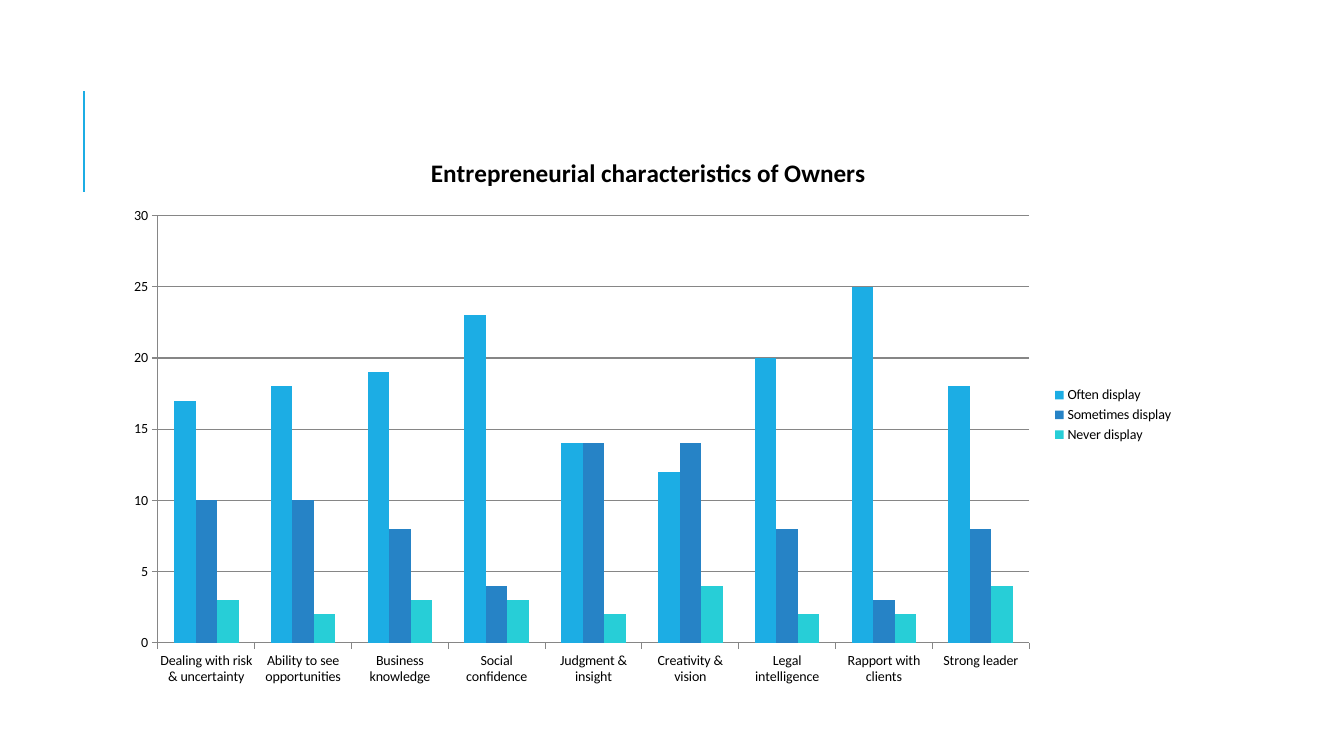
from dataclasses import dataclass

from lxml.etree import SubElement
from pptx import Presentation
from pptx.chart.chart import Chart
from pptx.chart.data import CategoryChartData
from pptx.dml.color import RGBColor
from pptx.enum.chart import XL_CHART_TYPE as ChartType
from pptx.enum.chart import XL_LEGEND_POSITION as LegendPosition
from pptx.enum.chart import XL_TICK_MARK as TickMark
from pptx.enum.shapes import MSO_CONNECTOR as ConnectorType
from pptx.oxml.ns import qn
from pptx.slide import Slide
from pptx.util import Cm, Pt

COLORS = {
    "background": "FFFFFF",
    "text": "000000",
    "axis": "868686",
    "accent": "1CADE4",
    "often": "1CADE4",
    "sometimes": "2683C6",
    "never": "27CED7",
}
FONT = "Calibri"
TITLE = "Entrepreneurial characteristics of Owners"
CHARACTERISTICS = (
    "Dealing with risk & uncertainty",
    "Ability to see opportunities",
    "Business knowledge",
    "Social confidence",
    "Judgment & insight",
    "Creativity & vision",
    "Legal intelligence",
    "Rapport with clients",
    "Strong leader",
)


@dataclass(frozen=True)
class Frequency:
    name: str
    color: str
    owners: tuple[int, ...]


FREQUENCIES = (
    Frequency("Often display", "often", (17, 18, 19, 23, 14, 12, 20, 25, 18)),
    Frequency("Sometimes display", "sometimes", (10, 10, 8, 4, 14, 14, 8, 3, 8)),
    Frequency("Never display", "never", (3, 2, 3, 3, 2, 4, 2, 2, 4)),
)


def rgb(name: str) -> RGBColor:
    return RGBColor.from_string(COLORS[name])


def add_accent_line(slide: Slide) -> None:
    line = slide.shapes.add_connector(
        ConnectorType.STRAIGHT, Cm(2.12), Cm(4.83), Cm(2.12), Cm(2.29)
    )
    line.line.color.rgb = rgb("accent")
    line.line.width = Pt(1.5)
    SubElement(line._element.spPr, qn("a:effectLst"))


def add_column_chart(slide: Slide) -> Chart:
    chart_data = CategoryChartData()
    chart_data.categories = CHARACTERISTICS
    for frequency in FREQUENCIES:
        chart_data.add_series(frequency.name, frequency.owners)
    chart = slide.shapes.add_chart(
        ChartType.COLUMN_CLUSTERED, Cm(2.84), Cm(3.38), Cm(27), Cm(14.15), chart_data
    ).chart
    chart.font.name = FONT
    chart.font.size = Pt(10)
    chart.font.color.rgb = rgb("text")

    plot = chart.plots[0]
    plot.vary_by_categories = False
    plot.gap_width = 150
    plot.overlap = 0
    for series, frequency in zip(plot.series, FREQUENCIES):
        series.format.fill.solid()
        series.format.fill.fore_color.rgb = rgb(frequency.color)
    return chart


def style_title(chart: Chart) -> None:
    chart.has_title = True
    chart.chart_title.include_in_layout = False
    text_frame = chart.chart_title.text_frame
    text_frame.text = TITLE
    font = text_frame.paragraphs[0].runs[0].font
    font.name = FONT
    font.size = Pt(18)
    font.bold = True
    font.color.rgb = rgb("text")


def style_axes(chart: Chart) -> None:
    value_axis = chart.value_axis
    value_axis.minimum_scale = 0
    value_axis.maximum_scale = 30
    value_axis.major_unit = 5
    value_axis.has_major_gridlines = True
    for axis in (chart.category_axis, value_axis):
        axis.major_tick_mark = TickMark.OUTSIDE
        axis.minor_tick_mark = TickMark.NONE
    for part in (chart.category_axis, value_axis, value_axis.major_gridlines):
        part.format.line.color.rgb = rgb("axis")
        part.format.line.width = Pt(0.75)


def style_legend(chart: Chart) -> None:
    chart.has_legend = True
    chart.legend.position = LegendPosition.RIGHT
    chart.legend.include_in_layout = False


def main() -> None:
    presentation = Presentation()
    presentation.slide_width = Cm(33.87)
    presentation.slide_height = Cm(19.05)
    slide = presentation.slides.add_slide(presentation.slide_layouts[6])
    slide.background.fill.solid()
    slide.background.fill.fore_color.rgb = rgb("background")
    add_accent_line(slide)
    chart = add_column_chart(slide)
    style_title(chart)
    style_axes(chart)
    style_legend(chart)
    presentation.save("out.pptx")


if __name__ == "__main__":
    main()
